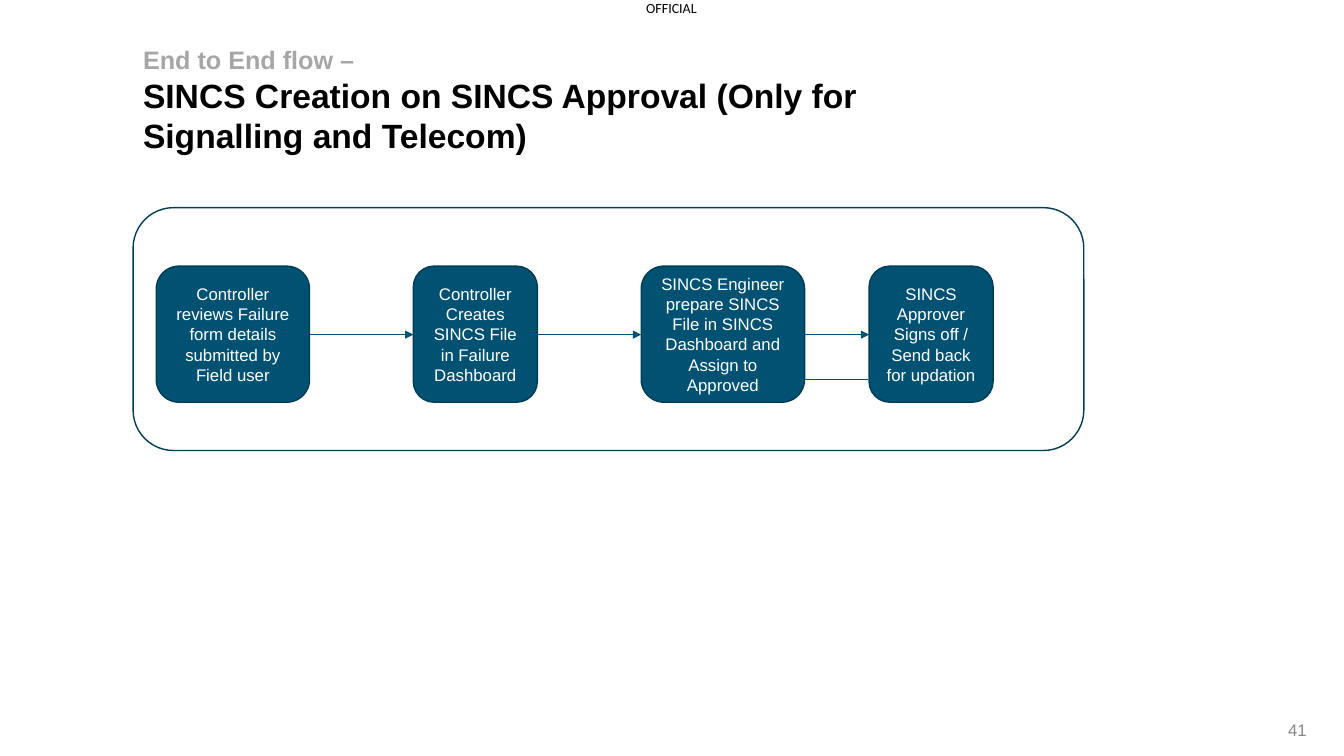
import pptx
import pptx.dml.color
import pptx.enum.shapes
import pptx.enum.text
import pptx.oxml
import pptx.oxml.ns
import pptx.util
from lxml import etree

RGBColor = pptx.dml.color.RGBColor
ALIGN = pptx.enum.text.PP_ALIGN
ANCHOR = pptx.enum.text.MSO_ANCHOR

# Lengths are whole px, 100 to the inch
EMU_PER_PX = 9144

BLACK = RGBColor(0x00, 0x00, 0x00)
WHITE = RGBColor(0xFF, 0xFF, 0xFF)
TEAL = RGBColor(0x00, 0x51, 0x72)
DARK_TEAL = RGBColor(0x00, 0x3C, 0x54)
LIGHT_GREY = RGBColor(0xA6, 0xA6, 0xA6)
NUMBER_GREY = RGBColor(0x89, 0x89, 0x89)

STEP_TOP, STEP_HEIGHT = 264, 135
FORWARD_Y, RETURN_Y = 332, 376

# Left, width and wording of each step
STEPS = [
    (155, 152, "Controller reviews Failure form details submitted by Field user"),
    (410, 123, "Controller Creates SINCS File in Failure Dashboard"),
    (636, 162, "SINCS Engineer prepare SINCS File in SINCS Dashboard and Assign to Approved"),
    (862, 123, "SINCS Approver Signs off / Send back for updation"),
]


def px(length):
    return pptx.util.Emu(length * EMU_PER_PX)


def add_run(paragraph, text, size, color, font="Arial", bold=False):
    run = paragraph.add_run()
    run.text = text
    run.font.name = font
    run.font.size = pptx.util.Pt(size)
    run.font.bold = bold
    run.font.color.rgb = color


def add_text_box(slide, left, top, width, height, anchor=ANCHOR.TOP):
    box = slide.shapes.add_textbox(px(left), px(top), px(width), px(height))
    frame = box.text_frame
    frame.word_wrap = True
    frame.vertical_anchor = anchor
    return frame


def add_rounded_box(slide, left, top, width, height, fill=None):
    shape = slide.shapes.add_shape(
        pptx.enum.shapes.MSO_SHAPE.ROUNDED_RECTANGLE,
        px(left), px(top), px(width), px(height))
    shape.shadow.inherit = False
    if fill is None:
        shape.fill.background()
    else:
        shape.fill.solid()
        shape.fill.fore_color.rgb = fill
    shape.line.color.rgb = DARK_TEAL
    shape.line.width = pptx.util.Pt(1)
    return shape


def add_step(slide, left, width, text):
    shape = add_rounded_box(slide, left, STEP_TOP, width, STEP_HEIGHT, TEAL)
    frame = shape.text_frame
    frame.word_wrap = True
    frame.vertical_anchor = ANCHOR.MIDDLE
    paragraph = frame.paragraphs[0]
    paragraph.alignment = ALIGN.CENTER
    add_run(paragraph, text, 12, WHITE)


def add_arrow(slide, start, end, y):
    connector = slide.shapes.add_connector(
        pptx.enum.shapes.MSO_CONNECTOR.STRAIGHT, px(start), px(y), px(end), px(y))
    connector.line.color.rgb = TEAL
    connector.line.width = pptx.util.Pt(0.5)
    qualified = pptx.oxml.ns.qn
    etree.SubElement(connector.line._get_or_add_ln(), qualified("a:tailEnd"), type="triangle")
    etree.SubElement(connector._element.spPr, qualified("a:effectLst"))


def add_marking(slide):
    frame = add_text_box(slide, 641, 0, 53, 17)
    frame.word_wrap = False
    frame.margin_left = frame.margin_right = 0
    frame.margin_top = frame.margin_bottom = 0
    add_run(frame.paragraphs[0], "OFFICIAL", 10, BLACK, font="Calibri")


def add_title(slide):
    frame = add_text_box(slide, 132, 39, 868, 121)
    add_run(frame.paragraphs[0], "End to End flow –", 18, LIGHT_GREY, bold=True)
    add_run(frame.add_paragraph(),
            "SINCS Creation on SINCS Approval (Only for Signalling and Telecom)",
            24, BLACK, bold=True)


def add_slide_number(slide):
    frame = add_text_box(slide, 1213, 714, 93, 20, ANCHOR.MIDDLE)
    paragraph = frame.paragraphs[0]
    paragraph.alignment = ALIGN.RIGHT
    add_run(paragraph, "41", 12, NUMBER_GREY)


def main():
    presentation = pptx.Presentation()
    presentation.slide_width = px(1333)
    presentation.slide_height = px(750)
    slide = presentation.slides.add_slide(presentation.slide_layouts[6])

    # Marking, frame and page number
    add_marking(slide)
    add_rounded_box(slide, 132, 206, 943, 241)
    add_slide_number(slide)

    # Process steps
    for left, width, text in STEPS:
        add_step(slide, left, width, text)

    # Arrows from each step to the next
    for (left, width, _), (next_left, _, _) in zip(STEPS, STEPS[1:]):
        add_arrow(slide, left + width, next_left, FORWARD_Y)

    # Title
    add_title(slide)

    # Return arrow from approver to engineer
    add_arrow(slide, 861, 758, RETURN_Y)

    presentation.save("out.pptx")


if __name__ == "__main__":
    main()
